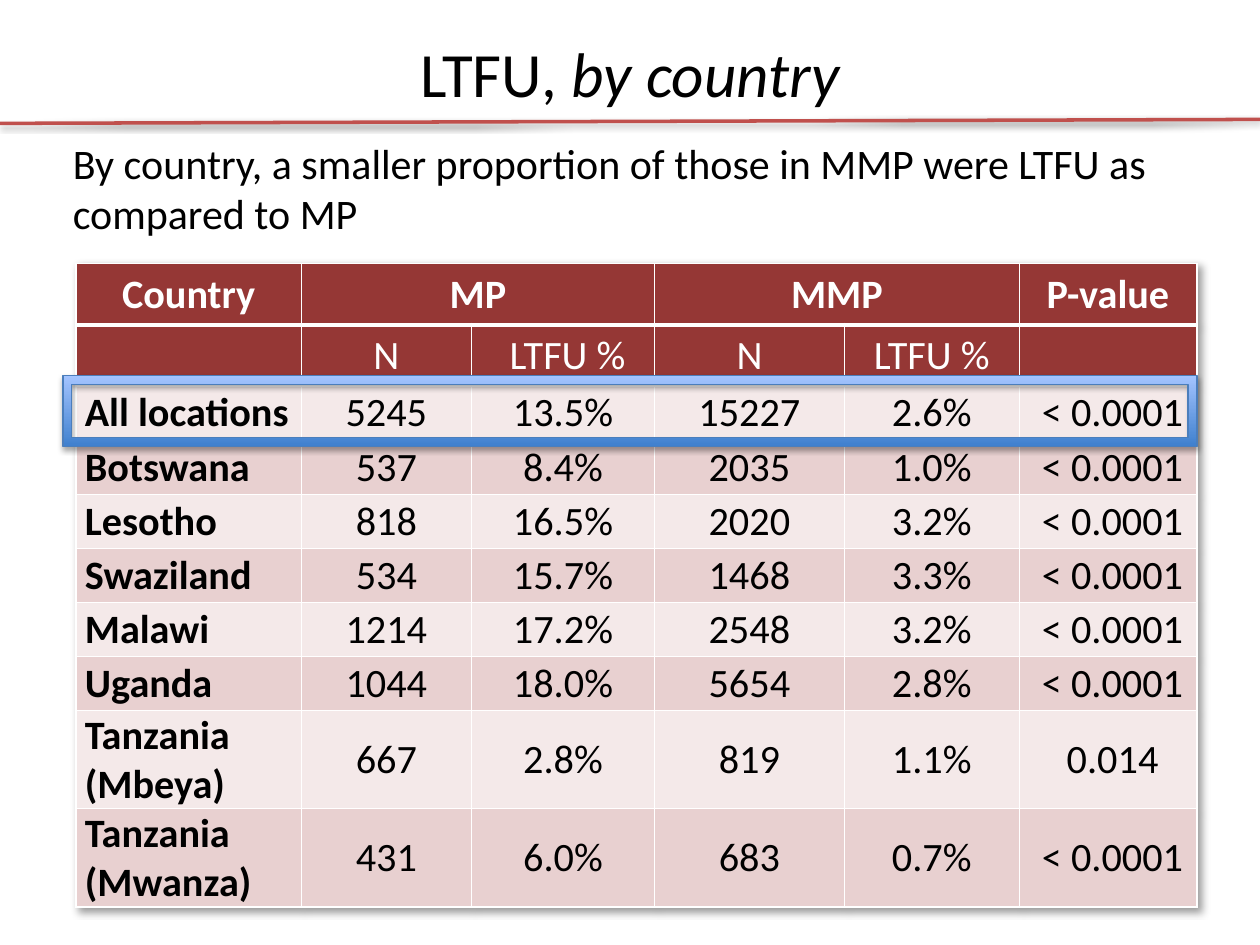
import pptx
import pptx.util
import pptx.dml.color
import pptx.enum.shapes
import pptx.enum.text
import pptx.oxml
import pptx.oxml.ns

Pt = pptx.util.Pt
CENTER = pptx.enum.text.PP_ALIGN.CENTER
MIDDLE = pptx.enum.text.MSO_ANCHOR.MIDDLE
NAMESPACE = pptx.oxml.ns.nsdecls("a")


def color(hex_string):
    return pptx.dml.color.RGBColor.from_string(hex_string)


def shadow_effect(blur, distance, angle, opacity):
    return pptx.oxml.parse_xml(
        f'<a:effectLst {NAMESPACE}><a:outerShdw blurRad="{Pt(blur)}" dist="{Pt(distance)}" '
        f'dir="{angle * 60000}" rotWithShape="0"><a:srgbClr val="000000">'
        f'<a:alpha val="{opacity * 1000}"/></a:srgbClr></a:outerShdw></a:effectLst>')


deck = pptx.Presentation()
deck.slide_width, deck.slide_height = Pt(720), Pt(540)
page = deck.slides.add_slide(deck.slide_layouts[5])

intro = page.shapes.add_textbox(Pt(34.5), Pt(75), Pt(685.5), Pt(70.5))
intro.text_frame.word_wrap = True
intro.text_frame.text = "By country, a smaller proportion of those in MMP were LTFU as compared to MP"
span = intro.text_frame.paragraphs[0].runs[0]
span.font.size, span.font.name = Pt(24), "Calibri"
span.font.color.rgb = color("000000")

rule = page.shapes.add_connector(
    pptx.enum.shapes.MSO_CONNECTOR.STRAIGHT, Pt(0), Pt(70.5), Pt(720), Pt(68.25))
rule.line.color.rgb = color("C0504D")
rule.line.width = Pt(2)
rule._element.spPr.append(shadow_effect(3.1, 1.6, 90, 38))

title = page.shapes.title
title.left, title.top, title.width, title.height = Pt(36), Pt(14.4), Pt(648), Pt(54)
title.text_frame.vertical_anchor = MIDDLE
para = title.text_frame.paragraphs[0]
para.alignment = CENTER
for words, italic in [("LTFU, ", False), ("by country", True)]:
    span = para.add_run()
    span.text = words
    span.font.size, span.font.name, span.font.italic = Pt(36), "Calibri", italic
    span.font.color.rgb = color("000000")

rows = [
    ["Country", "MP", "", "MMP", "", "P-value"],
    ["", "N", " LTFU %", "N", "LTFU %", ""],
    ["All locations", "5245", "13.5%", "15227", "2.6%", " < 0.0001"],
    ["Botswana", "537", "8.4%", "2035", "1.0%", " < 0.0001"],
    ["Lesotho", "818", "16.5%", "2020", "3.2%", " < 0.0001"],
    ["Swaziland", "534", "15.7%", "1468", "3.3%", " < 0.0001"],
    ["Malawi", "1214", "17.2%", "2548", "3.2%", " < 0.0001"],
    ["Uganda", "1044", "18.0%", "5654", "2.8%", " < 0.0001"],
    ["Tanzania (Mbeya)", "667", "2.8%", "819", "1.1%", " 0.014"],
    ["Tanzania (Mwanza)", "431", "6.0%", "683", "0.7%", " < 0.0001"],
]
column_widths = [128.7, 97.2, 104.7, 108.4, 100, 101.5]
row_heights = [35] * 2 + [30.9] * 6 + [56.1] * 2

table = page.shapes.add_table(
    len(rows), len(column_widths), Pt(43.5), Pt(150.7),
    Pt(sum(column_widths)), Pt(sum(row_heights))).table
table._tbl.tblPr.insert(0, shadow_effect(4, 3, 45, 40))
for column, width in zip(table.columns, column_widths):
    column.width = Pt(width)
for row, height in zip(table.rows, row_heights):
    row.height = Pt(height)
for first in (1, 3):
    table.cell(0, first).merge(table.cell(0, first + 1))

for row_index, values in enumerate(rows):
    is_header = row_index < 2
    background = "953735" if is_header else ("F4E9E9", "E8D0D0")[row_index % 2]
    for column_index, value in enumerate(values):
        cell = table.cell(row_index, column_index)
        cell.vertical_anchor = MIDDLE
        if not is_header:
            cell.margin_left = cell.margin_right = Pt(5)
            cell.margin_top = cell.margin_bottom = Pt(0)
        for side in "LRTB":
            thick = (row_index, side) in [(0, "B"), (1, "T")]
            cell._tc.get_or_add_tcPr().append(pptx.oxml.parse_xml(
                f'<a:ln{side} {NAMESPACE} w="{Pt(3 if thick else 1)}"><a:solidFill>'
                f'<a:srgbClr val="FFFFFF"/></a:solidFill></a:ln{side}>'))
        cell.fill.solid()
        cell.fill.fore_color.rgb = color(background)
        para = cell.text_frame.paragraphs[0]
        para.font.size = Pt(23)
        if value:
            para.text = value
            if is_header or column_index > 0:
                para.alignment = CENTER
            font = para.runs[0].font
            font.size, font.name = Pt(23), "Calibri"
            font.bold = row_index == 0 or column_index == 0
            font.color.rgb = color("FFFFFF" if is_header else "000000")

highlight = page.shapes.add_shape(
    pptx.enum.shapes.MSO_SHAPE.FRAME, Pt(36), Pt(214.7), Pt(648), Pt(40.3))
highlight.fill.gradient()
highlight.fill.gradient_angle = 90
for stop, position, shade in zip(highlight.fill.gradient_stops, (0, 1), ("3F80CE", "A4C4FF")):
    stop.position = position
    stop.color.rgb = color(shade)
highlight.line.color.rgb = color("4B7EBC")
highlight.line.width = Pt(0.75)
highlight._element.spPr.append(shadow_effect(3.1, 1.8, 90, 35))

deck.save("out.pptx")
